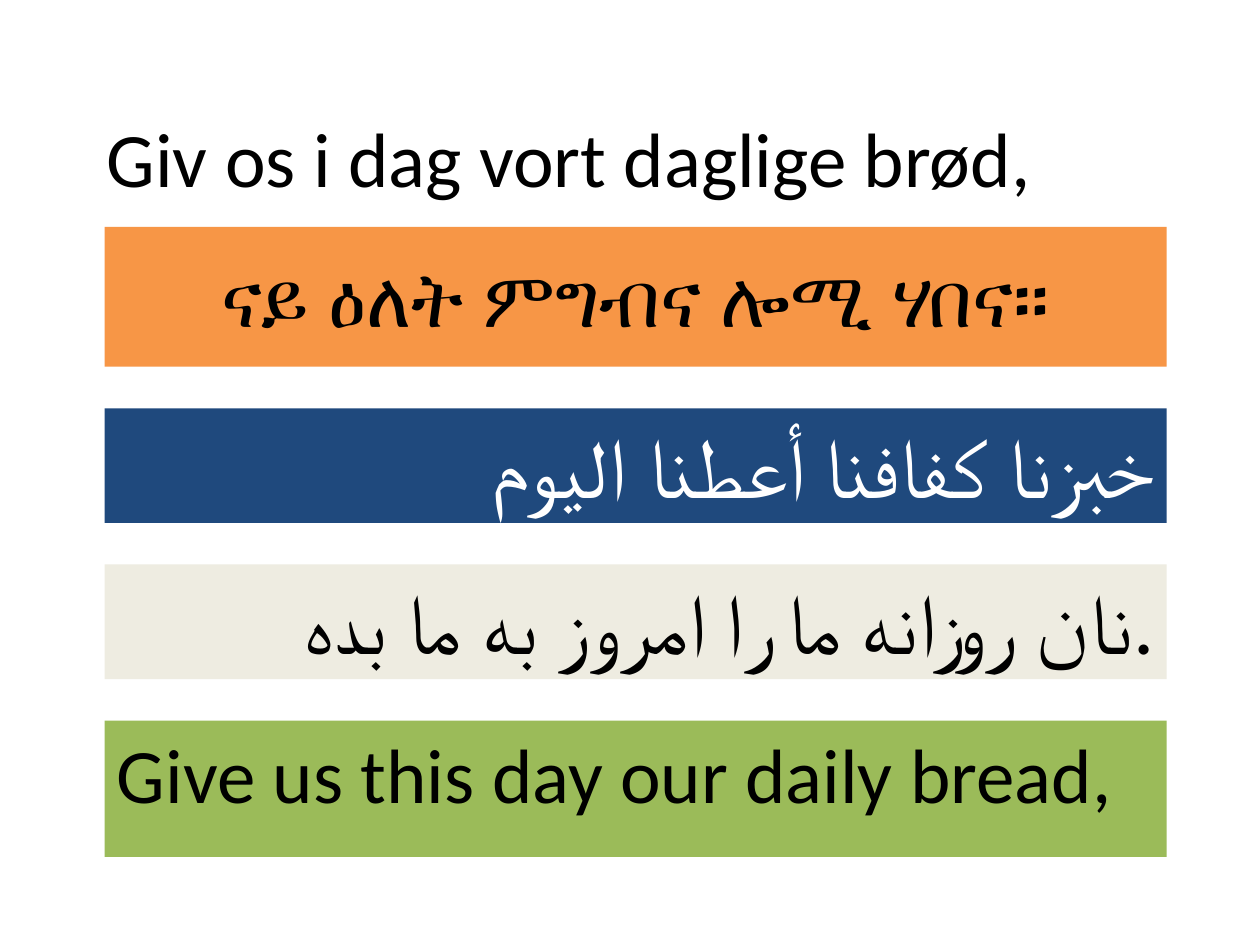
from pptx import Presentation
from pptx.dml.color import RGBColor
from pptx.enum.shapes import MSO_SHAPE
from pptx.enum.text import MSO_ANCHOR as Anchor, PP_ALIGN as Align
from pptx.util import Inches, Pt

COLORS = {
    "black": "000000",
    "white": "FFFFFF",
    "orange": "F79646",
    "blue": "1F497D",
    "cream": "EEECE1",
    "green": "9BBB59",
}
BAND_LEFT, BAND_WIDTH = 0.83, 8.43
BANDS_TOP, BAND_GAP = 1.8, 0.33
BANDS = [
    ("ናይ ዕለት ምግብና ሎሚ ሃበና።", 1.11, "orange",
     dict(align=Align.CENTER, anchor=Anchor.MIDDLE)),
    ("خبزنا كفافنا أعطنا اليوم", 0.91, "blue",
     dict(size=48, color="white", align=Align.RIGHT)),
    ("نان روزانه ما را امروز به ما بده.", 0.91, "cream",
     dict(size=48, align=Align.RIGHT)),
    ("Give us this day our daily bread,", 1.08, "green", {}),
]


def write(shape, text, size=44, color="black", align=Align.LEFT, anchor=Anchor.TOP):
    frame = shape.text_frame
    frame.word_wrap = True
    frame.vertical_anchor = anchor
    para = frame.paragraphs[0]
    para.alignment = align
    span = para.add_run()
    span.text = text
    span.font.name = "Calibri"
    span.font.size = Pt(size)
    span.font.color.rgb = RGBColor.from_string(COLORS[color])


def add_title(page, box):
    title = page.shapes.add_textbox(*map(Inches, box))
    write(title, "Giv os i dag vort daglige brød,", anchor=Anchor.MIDDLE)


def add_band(page, box, text, fill, style):
    band = page.shapes.add_shape(MSO_SHAPE.RECTANGLE, *map(Inches, box))
    band.shadow.inherit = False
    band.fill.solid()
    band.fill.fore_color.rgb = RGBColor.from_string(COLORS[fill])
    band.line.fill.background()
    write(band, text, **style)


def add_translations(page, left, top, width):
    for text, height, fill, style in BANDS:
        add_band(page, (left, top, width, height), text, fill, style)
        top += height + BAND_GAP


def main():
    deck = Presentation()
    deck.slide_width, deck.slide_height = Inches(10), Inches(7.5)
    page = deck.slides.add_slide(deck.slide_layouts[6])
    add_title(page, (0.75, 0.44, 8.5, 1.61))
    add_translations(page, BAND_LEFT, BANDS_TOP, BAND_WIDTH)
    deck.save("out.pptx")


if __name__ == "__main__":
    main()
